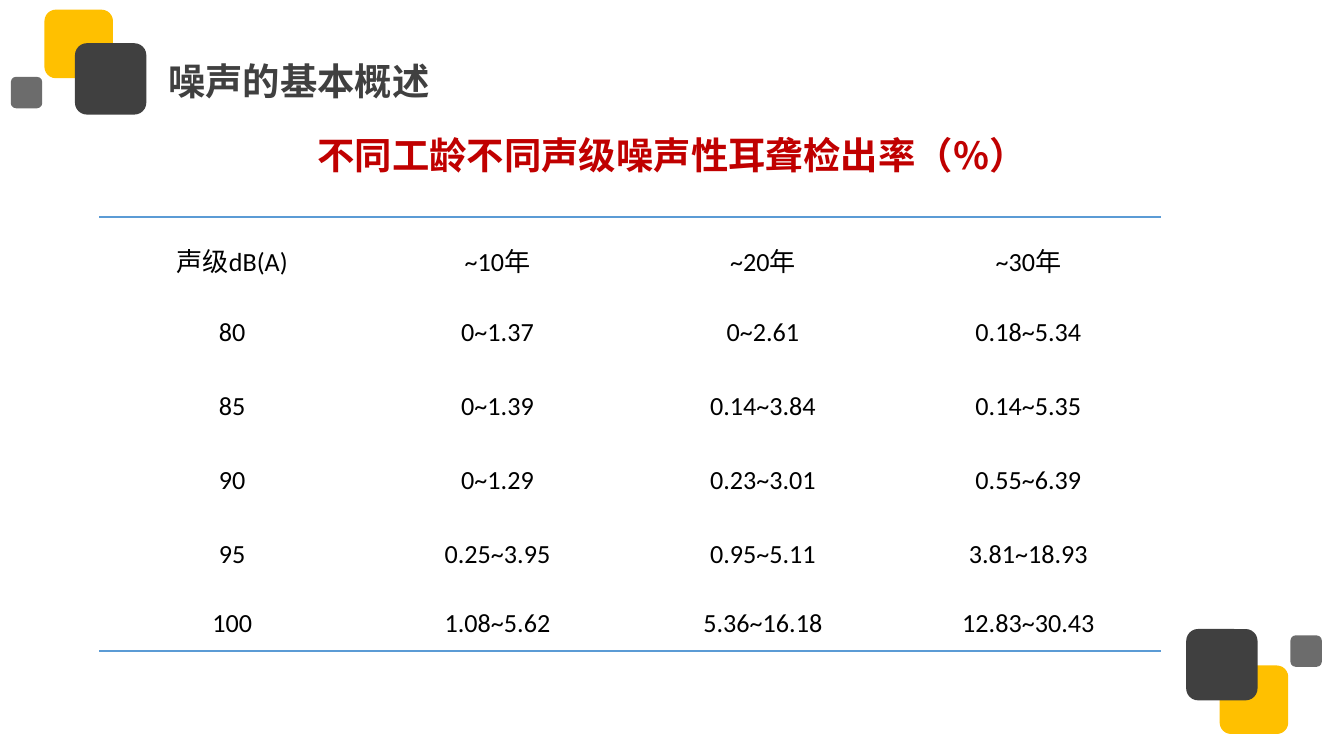
from lxml import etree
from pptx import Presentation
from pptx.dml.color import RGBColor
from pptx.enum.shapes import MSO_SHAPE
from pptx.enum.text import MSO_ANCHOR, PP_ALIGN
from pptx.oxml import parse_xml
from pptx.oxml.ns import nsdecls, qn
from pptx.util import Pt

ROUND = MSO_SHAPE.ROUNDED_RECTANGLE
MIDDLE = MSO_ANCHOR.MIDDLE
LEFT, CENTER = PP_ALIGN.LEFT, PP_ALIGN.CENTER
HAN, LATIN = "Noto Sans CJK SC", "Calibri"
DARK, GOLD, RED, BLUE = "404040", "FFC000", "C00000", "5B9BD5"
PLAIN = "{2D5ABB26-0587-4C30-8999-92F81FD0307C}"

BLOCKS = [
    (18, 0, 36.7, GOLD, 100),
    (34.4, 18, 38.2, DARK, 100),
    (0, 36, 16.8, DARK, 77),
]
ROWS = [
    ["声级dB(A)", "~10年", "~20年", "~30年"],
    ["80", "0~1.37", "0~2.61", "0.18~5.34"],
    ["85", "0~1.39", "0.14~3.84", "0.14~5.35"],
    ["90", "0~1.29", "0.23~3.01", "0.55~6.39"],
    ["95", "0.25~3.95", "0.95~5.11", "3.81~18.93"],
    ["100", "1.08~5.62", "5.36~16.18", "12.83~30.43"],
]


def color(code):
    return RGBColor.from_string(code)


def style(para, size, face, code, bold, align):
    font = para.font
    font.size, font.name, font.bold = Pt(size), face, bold
    font.color.rgb = color(code)
    latin = font._element.find(qn("a:latin"))
    latin.addnext(parse_xml(f'<a:ea {nsdecls("a")} typeface="{HAN}"/>'))
    para.alignment = align


def place(shape, box):
    shape.left, shape.top, shape.width, shape.height = map(Pt, box)


def draw_blocks(slide, box, turned=False):
    left, top, width, height = box
    for x, y, size, code, alpha in BLOCKS:
        if turned:
            x, y = width - x - size, height - y - size
        block = slide.shapes.add_shape(
            ROUND, Pt(left + x), Pt(top + y), Pt(size), Pt(size))
        block.shadow.inherit = False
        block.line.fill.background()
        block.fill.solid()
        block.fill.fore_color.rgb = color(code)
        if alpha < 100:
            tint = block._element.spPr.find(".//" + qn("a:srgbClr"))
            etree.SubElement(tint, qn("a:alpha")).set("val", str(alpha * 1000))


def draw_title(slide, box):
    title = slide.shapes.title
    place(title, box)
    frame = title.text_frame
    frame.text = "噪声的基本概述"
    frame.vertical_anchor = MIDDLE
    style(frame.paragraphs[0], 20, HAN, DARK, True, LEFT)


def draw_head(slide, box):
    frame = slide.shapes.add_textbox(*map(Pt, box)).text_frame
    frame.word_wrap = True
    frame.margin_top = frame.margin_bottom = Pt(2.9)
    frame.text = "不同工龄不同声级噪声性耳聋检出率（%）"
    style(frame.paragraphs[0], 20, HAN, RED, True, CENTER)


def add_rule(cell, side):
    cell._tc.get_or_add_tcPr().insert(0, parse_xml(
        f'<a:{side} {nsdecls("a")} w="{Pt(1)}"><a:solidFill>'
        f'<a:srgbClr val="{BLUE}"/></a:solidFill></a:{side}>'))


def fill_cell(cell, text):
    cell.text = text
    cell.fill.background()
    cell.vertical_anchor = MIDDLE
    cell.margin_left = cell.margin_right = Pt(5.8)
    cell.margin_top = cell.margin_bottom = Pt(2.9)
    para = cell.text_frame.paragraphs[0]
    para.line_spacing = 1.3
    para.space_before = Pt(4.2)
    style(para, 14, LATIN, "000000", False, CENTER)


def draw_table(slide, box):
    last = len(ROWS) - 1
    table = slide.shapes.add_table(
        len(ROWS), len(ROWS[0]), *map(Pt, box)).table
    table.first_row = table.horz_banding = False
    table._tbl.tblPr.find(qn("a:tableStyleId")).text = PLAIN
    end = 34.6
    for r, texts in enumerate(ROWS):
        table.rows[r].height = Pt(end if r == last else (box[3] - end) / last)
        for c, text in enumerate(texts):
            cell = table.cell(r, c)
            fill_cell(cell, text)
            if r == 0:
                add_rule(cell, "lnT")
            if r == last:
                add_rule(cell, "lnB")


def main():
    deck = Presentation()
    deck.slide_width, deck.slide_height = Pt(720), Pt(405)
    slide = deck.slides.add_slide(deck.slide_layouts[5])
    draw_blocks(slide, (5.8, 5.2, 72.6, 56.2))
    draw_blocks(slide, (635.5, 337, 72.6, 56.2), turned=True)
    draw_title(slide, (82.8, 27.4, 234.7, 31.7))
    draw_head(slide, (0, 67.7, 720, 29.5))
    draw_table(slide, (53.3, 116.2, 568.8, 232.6))
    deck.save("out.pptx")


if __name__ == "__main__":
    main()
